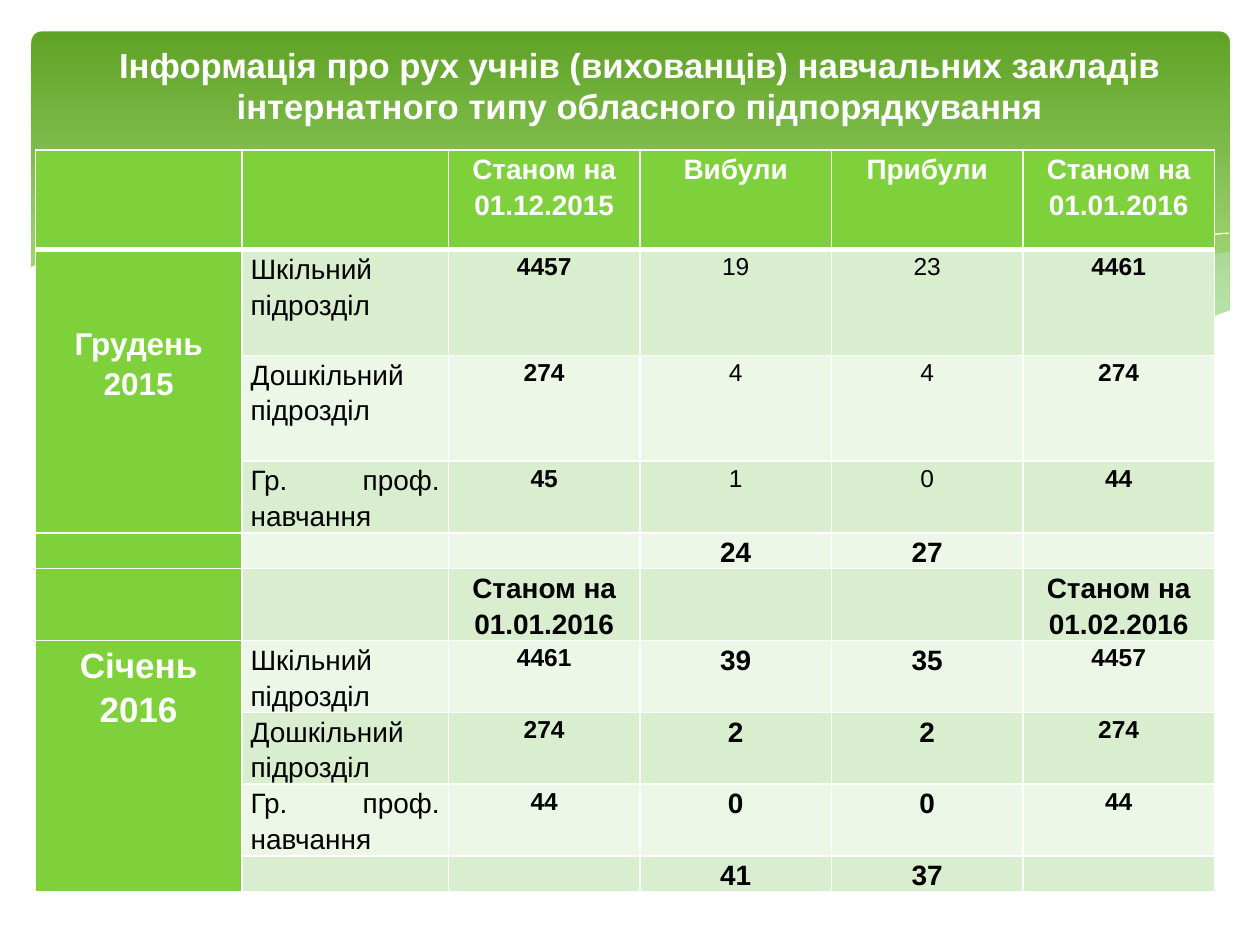
"""Build a one-slide report table on pupil movement."""
from dataclasses import dataclass

from lxml.etree import SubElement
from pptx import Presentation
from pptx.dml.color import RGBColor
from pptx.enum.shapes import MSO_SHAPE as Preset
from pptx.enum.text import MSO_ANCHOR as Anchor, PP_ALIGN as Align
from pptx.oxml.ns import qn
from pptx.util import Pt


@dataclass(frozen=True)
class Theme:
    font: str = "Arial"
    white: str = "FFFFFF"
    black: str = "000000"
    wave: str = "D6ECFF"
    accent: str = "7FD13B"
    bands: tuple = ("ECF7E8", "D8EECE")
    gradient: tuple = (("5FA326", 0), ("B2E389", 0.9))
    title: float = 19.8
    month: int = 18
    last_month: int = 20
    body: int = 16
    small: int = 14
    spacing: float = 1.15


THEME = Theme()
COLUMNS, ROWS = 1000, 750
FRAME = (25, 25, 951, 270)
TITLE_BOX = (50, 52, 915, 94)
TABLE_BOX = (28, 119, 937, 587)
COLUMN_WIDTHS = (164, 164, 152, 152, 152, 152)
ROW_HEIGHTS = (79, 84, 84, 57, 28.5, 57, 57, 57, 57, 28)
TITLE = ("Інформація про рух учнів (вихованців) навчальних закладів "
         "інтернатного типу обласного підпорядкування")
SCHOOL, PRESCHOOL, TRADE = "Шкільний підрозділ", "Дошкільний підрозділ", "Гр. проф. навчання"
TABLE_ROWS = (
    ("", "", "Станом на 01.12.2015", "Вибули", "Прибули", "Станом на 01.01.2016"),
    ("Грудень 2015", SCHOOL, "4457", "19", "23", "4461"),
    ("", PRESCHOOL, "274", "4", "4", "274"),
    ("", TRADE, "45", "1", "0", "44"),
    ("", "", "", "24", "27", ""),
    ("", "", "Станом на 01.01.2016", "", "", "Станом на 01.02.2016"),
    ("Січень 2016", SCHOOL, "4461", "39", "35", "4457"),
    ("", PRESCHOOL, "274", "2", "2", "274"),
    ("", TRADE, "44", "0", "0", "44"),
    ("", "", "", "41", "37", ""),
)
MONTH_SPANS = ((1, 3), (6, 9))
DECEMBER = range(1, 4)

RIGHT_WAVE = (
    (975, 200), (948, 204), (921, 210), (891, 216), (861, 223), (805, 237), (753, 248),
    (706, 257), (661, 265), (691, 269), (719, 272), (745, 275), (781, 277), (814, 278),
    (844, 277), (872, 274), (897, 270), (921, 265), (949, 257), (976, 247), (976, 200))
MIDDLE_WAVE = (
    (893, 273), (866, 269), (807, 260), (741, 247), (668, 231), (598, 214), (541, 203),
    (489, 194), (442, 189), (399, 186), (361, 185), (328, 187), (286, 191), (323, 196),
    (383, 207), (449, 222), (530, 240), (601, 255), (665, 266), (722, 274), (773, 277),
    (818, 278), (857, 277), (893, 273))
LONG_CREST = (
    (309, 195), (328, 192), (363, 189), (401, 187), (450, 188), (510, 192), (582, 200),
    (665, 213), (727, 226), (795, 241), (869, 261), (907, 272))
SHORT_CREST = (
    (613, 257), (653, 246), (695, 235), (748, 223), (806, 210), (866, 199), (910, 192),
    (951, 187), (975, 185))
PAGE_WAVE = (
    (977, 246), (950, 256), (920, 265), (887, 271), (850, 275), (809, 277), (761, 275),
    (708, 270), (648, 262), (579, 250), (503, 233), (447, 220), (391, 207), (340, 197),
    (292, 190), (250, 186), (211, 184), (161, 184), (119, 187), (85, 193), (59, 199),
    (40, 205), (29, 210), (23, 213), (23, 329), (977, 329))


def assign(target, **values):
    """Set each named attribute on the target."""
    for name, value in values.items():
        setattr(target, name, value)


def tint(fill, color):
    """Give a fill one solid colour."""
    fill.solid()
    fill.fore_color.rgb = RGBColor.from_string(color)


class Painter:
    """Holds the theme and the current page."""

    def __init__(self, deck, theme):
        """Add a titled page on a square grid."""
        self.theme = theme
        self.unit = deck.slide_width // COLUMNS
        self.page = deck.slides.add_slide(deck.slide_layouts[5])

    def size(self, *cells):
        """Turn grid cells into lengths."""
        return [round(cell * self.unit) for cell in cells]

    def letter(self, para, text, size, color, bold=True, align=Align.CENTER, spacing=1.0):
        """Fill a paragraph with one styled span."""
        assign(para, alignment=align, line_spacing=spacing)
        if not text:
            SubElement(para._p, qn("a:endParaRPr"), sz=str(size * 100))
            return
        span = para.add_run()
        span.text = text
        assign(span.font, name=self.theme.font, size=Pt(size), bold=bold)
        span.font.color.rgb = RGBColor.from_string(color)

    def title(self, text, box):
        """Place the title placeholder."""
        holder = self.page.shapes.title
        assign(holder, **dict(zip(("left", "top", "width", "height"), self.size(*box))))
        bottom, = self.size(63)
        assign(holder.text_frame, vertical_anchor=Anchor.MIDDLE, word_wrap=True,
               margin_top=0, margin_bottom=bottom)
        self.letter(holder.text_frame.paragraphs[0], text, self.theme.title, self.theme.white)

    def banner(self, box):
        """Draw the rounded gradient frame."""
        frame = self.page.shapes.add_shape(Preset.ROUNDED_RECTANGLE, *self.size(*box))
        frame.adjustments[0] = 0.03
        frame.shadow.inherit = False
        frame.line.fill.background()
        frame.fill.gradient()
        frame.fill.gradient_angle = 270
        for stop, (color, position) in zip(frame.fill.gradient_stops, self.theme.gradient):
            stop.color.rgb = RGBColor.from_string(color)
            stop.position = position

    def outline(self, points, closed):
        """Draw a bare freeform through grid points."""
        builder = self.page.shapes.build_freeform(*points[0], scale=self.unit)
        builder.add_line_segments(points[1:], close=closed)
        shape = builder.convert_to_shape()
        shape.shadow.inherit = False
        return shape

    def wave(self, points, color, opacity=100):
        """Draw a filled wave."""
        shape = self.outline(points, True)
        shape.line.fill.background()
        tint(shape.fill, color)
        solid = shape.fill._xPr.find(qn("a:solidFill"))
        if opacity < 100:
            SubElement(solid[0], qn("a:alpha"), val=str(opacity * 1000))

    def crest(self, points):
        """Draw a hairline wave crest."""
        shape = self.outline(points, False)
        shape.fill.background()
        tint(shape.line.fill, self.theme.white)
        shape.line.width = Pt(0)

    def border(self, cell, bottom):
        """Rule the four sides of a cell in white."""
        props = cell._tc.get_or_add_tcPr()
        for index, (side, width) in enumerate((("L", 1), ("R", 1), ("T", 1), ("B", bottom))):
            line = props.makeelement(qn(f"a:ln{side}"), {"w": str(Pt(width))})
            fill = SubElement(line, qn("a:solidFill"))
            SubElement(fill, qn("a:srgbClr"), val=self.theme.white)
            props.insert(index, line)

    def cell_style(self, row, column):
        """Choose the text format by place in the table."""
        theme = self.theme
        style = dict(size=theme.body, color=theme.black, bold=True, spacing=theme.spacing)
        labelled = bool(TABLE_ROWS[row][1])
        if row == 0 or column == 0:
            style["color"] = theme.white
        if column == 0 and TABLE_ROWS[row][0]:
            style["size"] = theme.month if row in DECEMBER else theme.last_month
        elif column == 1:
            style.update(bold=False, align=Align.JUSTIFY)
        elif labelled and column in (2, 5):
            style["size"] = theme.small
        elif row in DECEMBER and column in (3, 4):
            style.update(size=theme.small, bold=False)
        return style

    def table(self, rows, box):
        """Build the banded table with merged months."""
        grid = self.page.shapes.add_table(len(rows), len(rows[0]), *self.size(*box)).table
        for column, width in zip(grid.columns, self.size(*COLUMN_WIDTHS)):
            column.width = width
        for line, height in zip(grid.rows, self.size(*ROW_HEIGHTS)):
            line.height = height
        side, drop = self.size(7, 57)
        for row, texts in enumerate(rows):
            for column, text in enumerate(texts):
                cell = grid.cell(row, column)
                assign(cell, margin_left=side, margin_right=side, margin_bottom=0,
                       margin_top=drop if (row, column) == (1, 0) else 0)
                accent = row == 0 or column == 0
                tint(cell.fill, self.theme.accent if accent else self.theme.bands[row % 2])
                self.border(cell, 1 if row else 3)
                self.letter(cell.text_frame.paragraphs[0], text, **self.cell_style(row, column))
        for first, last in MONTH_SPANS:
            grid.cell(first, 0).merge(grid.cell(last, 0))


def main():
    """Compose and save the deck."""
    deck = Presentation()
    assign(deck, slide_width=COLUMNS * 9144, slide_height=ROWS * 9144)
    painter = Painter(deck, THEME)
    painter.banner(FRAME)
    painter.wave(RIGHT_WAVE, THEME.wave, 29)
    painter.wave(MIDDLE_WAVE, THEME.wave, 40)
    painter.crest(LONG_CREST)
    painter.crest(SHORT_CREST)
    painter.wave(PAGE_WAVE, THEME.white)
    holder = painter.page.shapes.title._element
    holder.getparent().append(holder)
    painter.title(TITLE, TITLE_BOX)
    painter.table(TABLE_ROWS, TABLE_BOX)
    deck.save("out.pptx")


if __name__ == "__main__":
    main()
